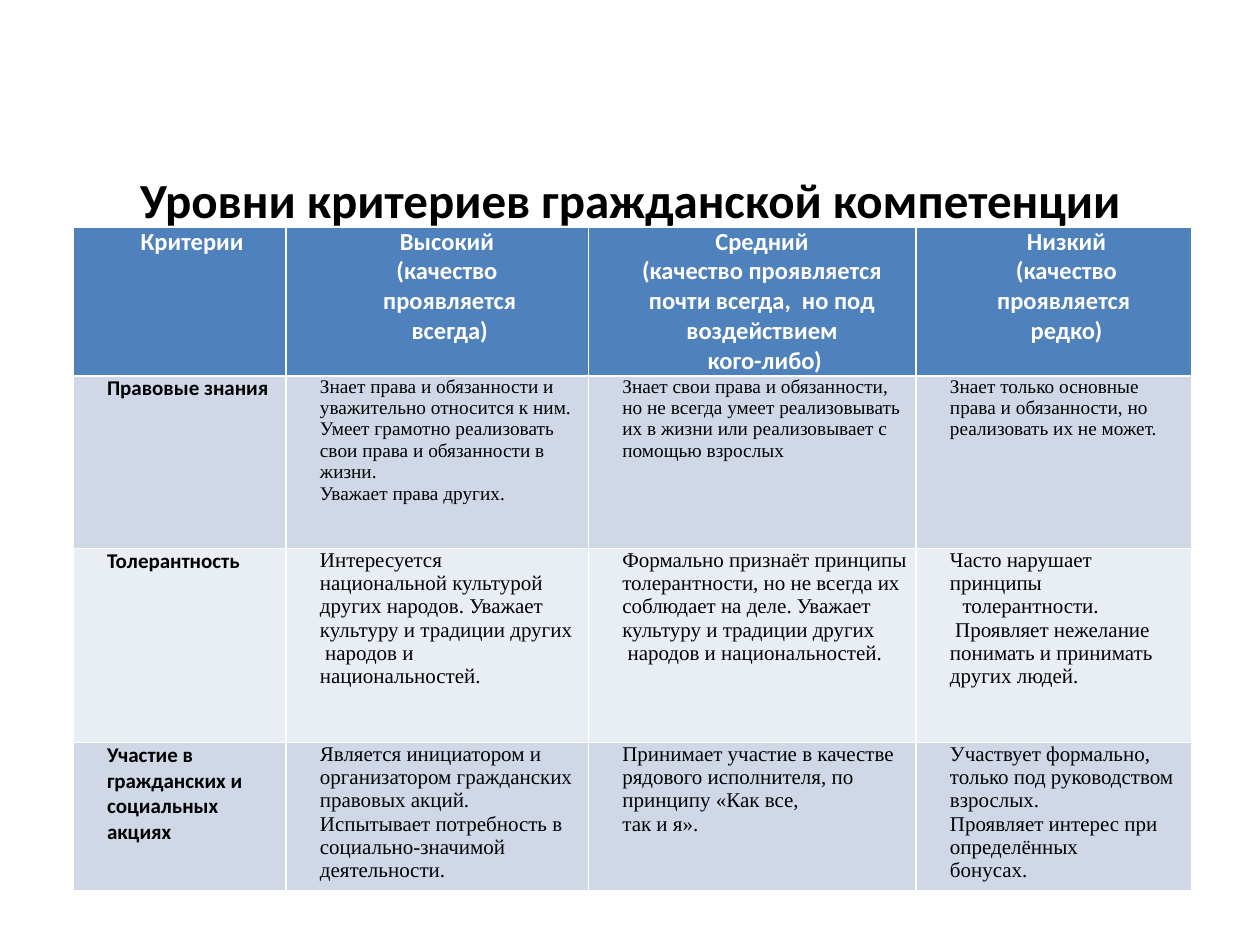
from pptx import Presentation
from pptx.dml.color import RGBColor
from pptx.enum.text import MSO_ANCHOR as Anchor, PP_ALIGN as Align
from pptx.util import Inches, Pt


def color(value):
    return RGBColor.from_string(value)


def style_paragraph(para, size, font_name, bold, text_color, align):
    para.alignment = align
    for span in para.runs:
        span.font.size = Pt(size)
        span.font.name = font_name
        span.font.bold = bold
        span.font.color.rgb = color(text_color)


COLUMN_WIDTHS = [1.69, 2.4, 2.6, 2.19]
ROW_HEIGHTS = [1.15, 1.37, 1.54, 1.18]
ROW_FILLS = ["4F81BD", "D0D8E8", "E9EDF4", "D0D8E8"]
BODY_SIZES = [14, 11, 12, 12]
ROWS = [
    [
        "Критерии",
        "Высокий \n(качество \nпроявляется\nвсегда)",
        "Средний \n(качество проявляется \nпочти всегда,  но под \nвоздействием \nкого-либо)",
        "Низкий\n(качество\nпроявляется \nредко)",
    ],
    [
        "Правовые знания",
        "Знает права и обязанности и уважительно относится к ним. "
        "Умеет грамотно реализовать свои права и обязанности в жизни.\n"
        "Уважает права других.",
        "Знает свои права и обязанности, но не всегда умеет реализовывать "
        "их в жизни или реализовывает с помощью взрослых",
        "Знает только основные права и обязанности, но реализовать их не может.",
    ],
    [
        "Толерантность",
        "Интересуется\nнациональной культурой других народов. "
        "Уважает культуру и традиции других\n народов и национальностей.",
        "Формально признаёт принципы толерантности, но не всегда их "
        "соблюдает на деле. Уважает культуру и традиции других\n"
        " народов и национальностей.",
        "Часто нарушает принципы\nтолерантности.\n"
        " Проявляет нежелание понимать и принимать других людей.",
    ],
    [
        "Участие в гражданских и социальных акциях",
        "Является инициатором и организатором гражданских правовых акций.\n"
        "Испытывает потребность в социально-значимой деятельности.",
        "Принимает участие в качестве рядового исполнителя, "
        "по принципу «Как все,\nтак и я».",
        "Участвует формально,\nтолько под руководством взрослых.\n"
        "Проявляет интерес при  определённых\nбонусах.",
    ],
]

deck = Presentation()
deck.slide_width = Inches(10)
deck.slide_height = Inches(7.5)
page = deck.slides.add_slide(deck.slide_layouts[5])

title = page.shapes.title
title.left, title.top = Inches(0.5), Inches(1.33)
title.width, title.height = Inches(9), Inches(0.5)
title.text_frame.text = "Уровни критериев гражданской компетенции"
title.text_frame.vertical_anchor = Anchor.MIDDLE
style_paragraph(title.text_frame.paragraphs[0], 28, "Calibri", True, "000000", Align.CENTER)

table = page.shapes.add_table(
    len(ROWS), len(COLUMN_WIDTHS), Inches(0.58), Inches(1.8),
    Inches(sum(COLUMN_WIDTHS)), Inches(sum(ROW_HEIGHTS)),
).table
for column, width in zip(table.columns, COLUMN_WIDTHS):
    column.width = Inches(width)

for row_index, texts in enumerate(ROWS):
    table.rows[row_index].height = Inches(ROW_HEIGHTS[row_index])
    is_header = row_index == 0
    for column_index, text in enumerate(texts):
        cell = table.cell(row_index, column_index)
        cell.fill.solid()
        cell.fill.fore_color.rgb = color(ROW_FILLS[row_index])
        cell.margin_left = cell.margin_right = Inches(0.07)
        cell.margin_top = cell.margin_bottom = 0
        cell.text_frame.text = text

        is_label = is_header or column_index == 0
        size = 12 if is_label and not is_header else BODY_SIZES[row_index]
        font_name = "Calibri" if is_label else "Times New Roman"
        text_color = "FFFFFF" if is_header else "000000"
        align = Align.CENTER if is_header else Align.LEFT
        for para in cell.text_frame.paragraphs:
            first_line = 0.1 if para.text == "толерантности." else 0
            properties = para._p.get_or_add_pPr()
            properties.set("marL", str(Inches(0.27 - 0.07)))
            properties.set("indent", str(Inches(first_line)))
            style_paragraph(para, size, font_name, is_label, text_color, align)

deck.save("out.pptx")
